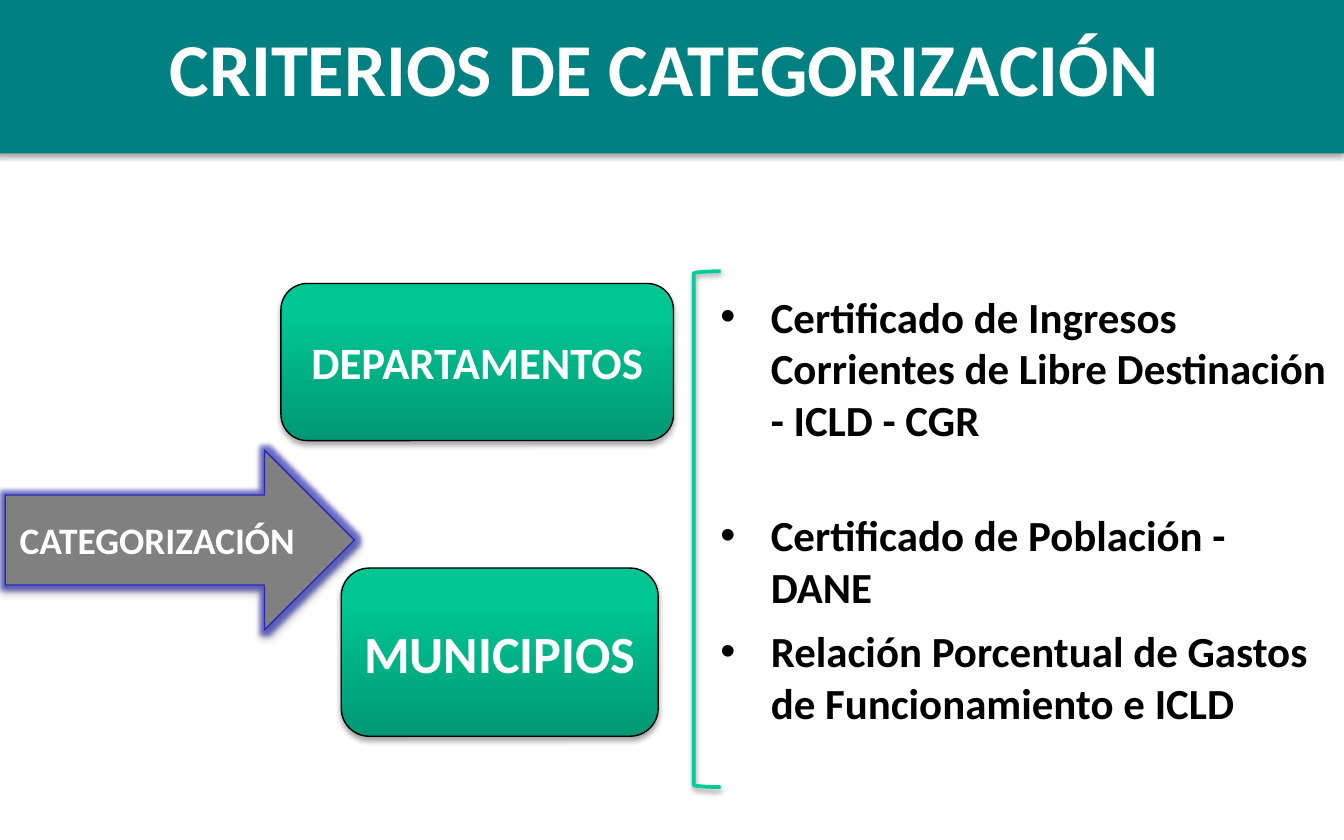
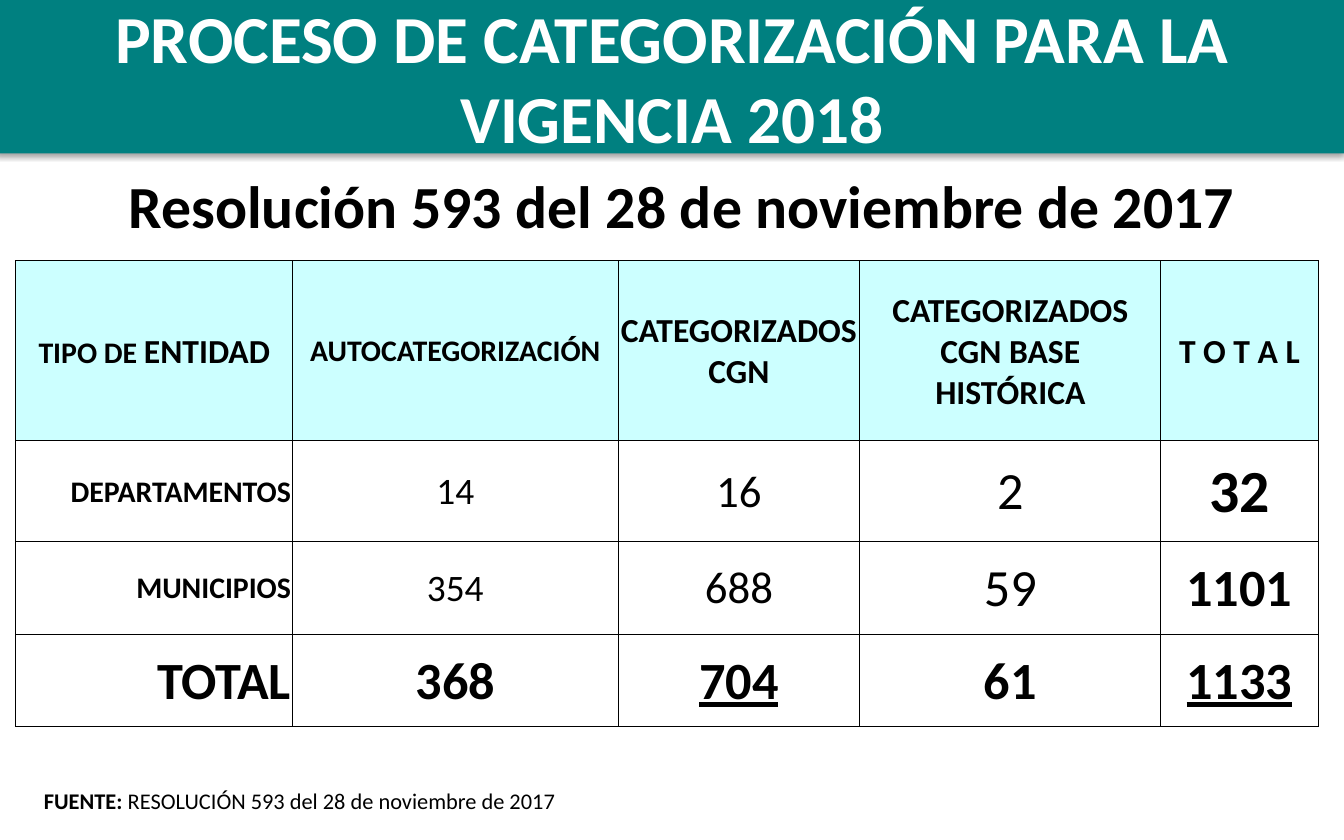
import copy
import dataclasses

import lxml.etree
import pptx
import pptx.dml.color
import pptx.enum.shapes
import pptx.enum.text
import pptx.oxml.ns
import pptx.util

Cm = pptx.util.Cm
Pt = pptx.util.Pt
qn = pptx.oxml.ns.qn
SHAPES = pptx.enum.shapes.MSO_SHAPE
ALIGN = pptx.enum.text.PP_ALIGN
ANCHOR = pptx.enum.text.MSO_ANCHOR


@dataclasses.dataclass(frozen=True)
class Theme:
    """Colours and type sizes shared by the slides."""
    font: str = "Calibri"
    band: str = "008080"
    light: str = "FFFFFF"
    dark: str = "000000"
    arrow: str = "808080"
    arrow_edge: str = "2929B8"
    bracket: str = "00CC99"
    header: str = "CCFFFF"
    gradient: tuple = ((0, "009872"), (0.8, "00C694"), (1, "00C795"))
    title: int = 40
    long_title: int = 36
    subtitle: int = 32
    bullet: int = 23
    source: int = 12
    total: int = 28
    header_small: int = 16
    header_large: int = 18
    columns: tuple = (16, 20, 24, 28, 32)


@dataclasses.dataclass(frozen=True)
class Box:
    """A region in centimetres."""
    left: float
    top: float
    width: float
    height: float

    def inside(self, left, top, width, height):
        """Return a region offset from this one."""
        return Box(self.left + left, self.top + top, width, height)

    def lengths(self):
        """Return the four lengths for python-pptx."""
        return [Cm(value) for value in dataclasses.astuple(self)]


THEME = Theme()
PAGE = Box(0, 0, 25.4, 15.88)


def rgb(colour):
    """Turn a hex string into a colour."""
    return pptx.dml.color.RGBColor.from_string(colour)


def style_run(run, size, colour=THEME.dark, bold=True, underline=False):
    """Format one run."""
    run.font.name = THEME.font
    run.font.size = Pt(size)
    run.font.color.rgb = rgb(colour)
    run.font.bold = bold
    run.font.underline = underline


def write(frame, text, size, align=ALIGN.CENTER, **style):
    """Fill a text frame and format all of its runs."""
    frame.text = text
    for paragraph in frame.paragraphs:
        paragraph.alignment = align
        for run in paragraph.runs:
            style_run(run, size, **style)


def append_run(paragraph, text, size, **style):
    """Continue a paragraph with a differently formatted run."""
    run = paragraph.add_run()
    run.text = text
    style_run(run, size, **style)


def add_effect(parent, kind, colour, opacity, **attributes):
    """Add a coloured effect to an effect list."""
    effect = lxml.etree.SubElement(parent, qn(f"a:{kind}"))
    for key, value in attributes.items():
        effect.set(key, str(value))
    tint = lxml.etree.SubElement(effect, qn("a:srgbClr"), val=colour)
    lxml.etree.SubElement(tint, qn("a:alpha"), val=str(opacity * 1000))


def add_figure(slide, kind, box, fill=None, edge=None, weight=0.75,
               opacity=35, distance=1.8, glow=None):
    """Add a preset shape with a soft shadow below it."""
    figure = slide.shapes.add_shape(kind, *box.lengths())
    figure.shadow.inherit = False
    if fill:
        figure.fill.solid()
        figure.fill.fore_color.rgb = rgb(fill)
    else:
        figure.fill.background()
    if edge:
        figure.line.color.rgb = rgb(edge)
        figure.line.width = Pt(weight)
    else:
        figure.line.fill.background()
    effects = figure.element.spPr.find(qn("a:effectLst"))
    if glow:
        add_effect(effects, "glow", glow, 60, rad=Pt(5))
    add_effect(effects, "outerShdw", THEME.dark, opacity, blurRad=Pt(3.1),
               dist=Pt(distance), dir=5400000, rotWithShape=0)
    return figure


def label(figure, text, size):
    """Centre a white label in a shape."""
    write(figure.text_frame, text, size, colour=THEME.light)
    figure.text_frame.word_wrap = False
    figure.text_frame.vertical_anchor = ANCHOR.MIDDLE


def fill_gradient(figure):
    """Apply the green gradient, darkest at the bottom."""
    figure.fill.gradient()
    figure.fill.gradient_angle = 90
    stops = figure.element.spPr.find(f".//{qn('a:gsLst')}")
    stops.append(copy.deepcopy(stops[0]))
    for stop, (position, colour) in zip(figure.fill.gradient_stops, THEME.gradient):
        stop.position = position
        stop.color.rgb = rgb(colour)


def place(placeholder, box):
    """Move a placeholder and fix its text at the top."""
    placeholder.left, placeholder.top, placeholder.width, placeholder.height = box.lengths()
    placeholder.text_frame.auto_size = pptx.enum.text.MSO_AUTO_SIZE.NONE
    placeholder.text_frame.vertical_anchor = ANCHOR.TOP
    placeholder.text_frame.word_wrap = True


def add_title(slide, box, text, size):
    """Write the slide title over the band."""
    place(slide.shapes.title, box)
    write(slide.shapes.title.text_frame, text, size, colour=THEME.light)


def move_band_to_layout(slide):
    """Draw the title band and hand it to the layout."""
    band = add_figure(slide, SHAPES.RECTANGLE, PAGE.inside(-0.1, -0.05, 25.5, 2.95),
                      fill=THEME.band, opacity=38, distance=1.6)
    band.element.nvSpPr.cNvPr.set("id", "20")
    slide.slide_layout.element.cSld.spTree.insert(2, band.element)


def add_entities(slide, box):
    """Draw the arrow leading to the two types of entity."""
    arrow = add_figure(slide, SHAPES.RIGHT_ARROW, box.inside(0, 3.15, 6.6, 3.4),
                       THEME.arrow, THEME.arrow_edge, glow=THEME.arrow_edge)
    label(arrow, "CATEGORIZACIÓN", 20)
    for name, size, area in (
        ("DEPARTAMENTOS", 24, box.inside(5.21, 0, 7.42, 2.97)),
        ("MUNICIPIOS", 28, box.inside(6.35, 5.38, 5.99, 3.18)),
    ):
        entity = add_figure(slide, SHAPES.ROUNDED_RECTANGLE, area, edge=THEME.dark)
        fill_gradient(entity)
        label(entity, name, size)


def add_requirements(slide, box):
    """List the required certificates beside a bracket."""
    requirements = slide.placeholders[1]
    place(requirements, box.inside(0.25, 0.23, 11.99, 8.6))
    write(requirements.text_frame,
          "Certificado de Ingresos Corrientes de Libre Destinación - ICLD - CGR\n"
          "Certificado de Población - DANE\n"
          "Relación Porcentual de Gastos de Funcionamiento e ICLD",
          THEME.bullet, ALIGN.LEFT)
    for paragraph, gap in zip(requirements.text_frame.paragraphs, (0, 34.5, 7)):
        paragraph.space_before = Pt(gap)
    add_figure(slide, SHAPES.LEFT_BRACKET, box.inside(0, 0, 0.51, 9.75),
               edge=THEME.bracket, weight=2, opacity=38, distance=1.6)


def add_resolution(slide, box):
    """Write the resolution line without a bullet."""
    resolution = slide.placeholders[1]
    place(resolution, box)
    write(resolution.text_frame, "Resolución 593 del 28 de noviembre de 2017", THEME.subtitle)
    paragraph = resolution.text_frame.paragraphs[0]
    paragraph.space_before = Pt(0)
    properties = paragraph._p.get_or_add_pPr()
    properties.set("marL", "0")
    properties.set("indent", "0")
    lxml.etree.SubElement(properties, qn("a:buNone"))


def style_cell(cell, fill=None):
    """Give a cell thin borders, narrow margins and its fill."""
    properties = cell._tc.get_or_add_tcPr()
    for side in "LRTB":
        border = lxml.etree.SubElement(properties, qn(f"a:ln{side}"), w=str(Pt(0.5)))
        paint = lxml.etree.SubElement(border, qn("a:solidFill"))
        lxml.etree.SubElement(paint, qn("a:srgbClr"), val=THEME.dark)
    cell.vertical_anchor = ANCHOR.MIDDLE
    cell.margin_left = cell.margin_right = cell.margin_top = Cm(0.03)
    cell.margin_bottom = 0
    if fill:
        cell.fill.solid()
        cell.fill.fore_color.rgb = rgb(fill)
    else:
        cell.fill.background()


def add_categorization_table(slide, box):
    """Build the table of entities by way of categorization."""
    headers = ("TIPO DE ", "AUTOCATEGORIZACIÓN", "CATEGORIZADOS\nCGN",
               "CATEGORIZADOS\nCGN BASE\nHISTÓRICA", "T O T A L")
    counts = (("DEPARTAMENTOS", "14", "16", "2", "32"),
              ("MUNICIPIOS", "354", "688", "59", "1101"),
              ("TOTAL", "368", "704", "61", "1133"))
    widths = (5.23, 6.15, 4.57, 5.69, 2.97)
    heights = (3.4, 1.91, 1.75, 1.75)
    table = slide.shapes.add_table(len(heights), len(widths), *box.lengths()).table
    table.first_row = table.horz_banding = False
    for column, width in zip(table.columns, widths):
        column.width = Cm(width)
    for row, height in zip(table.rows, heights):
        row.height = Cm(height)

    for index, header in enumerate(headers):
        cell = table.cell(0, index)
        style_cell(cell, THEME.header)
        write(cell.text_frame, header, THEME.header_small if index < 2 else THEME.header_large)
    append_run(table.cell(0, 0).text_frame.paragraphs[0], "ENTIDAD", THEME.header_large)

    for row, values in enumerate(counts, 1):
        is_total = row == len(counts)
        for column, value in enumerate(values):
            cell = table.cell(row, column)
            style_cell(cell)
            size = THEME.total if is_total else THEME.columns[column]
            if row > 1:
                size = min(size, THEME.total)
            write(cell.text_frame, value, size,
                  ALIGN.CENTER if column else ALIGN.RIGHT,
                  bold=is_total or column in (0, 4),
                  underline=is_total and column in (2, 4))


def add_source(slide, box):
    """Write the source line."""
    frame = slide.shapes.add_textbox(*box.lengths()).text_frame
    frame.word_wrap = True
    write(frame, "FUENTE: ", THEME.source, ALIGN.LEFT)
    append_run(frame.paragraphs[0], "RESOLUCIÓN 593 del 28 de noviembre de 2017",
               THEME.source, bold=False)


def build_criteria(slide, page):
    """Build the slide on categorization criteria."""
    add_title(slide, page.inside(0.41, 0.28, 24.28, 3), "CRITERIOS DE CATEGORIZACIÓN",
              THEME.title)
    add_entities(slide, page.inside(0.1, 5.36, 12.63, 8.56))
    add_requirements(slide, page.inside(13.11, 5.13, 12.24, 9.75))


def build_process(slide, page):
    """Build the slide on the categorization process."""
    add_title(slide, page.inside(0, -0.2, 25.4, 3),
              "PROCESO DE CATEGORIZACIÓN PARA LA VIGENCIA 2018", THEME.long_title)
    add_resolution(slide, page.inside(0.48, 3.07, 24.82, 12.57))
    add_source(slide, page.inside(0.58, 14.76, 13.26, 0.76))
    add_categorization_table(slide, page.inside(0.3, 4.93, 24.61, 8.81))


def main():
    """Build and save the presentation."""
    deck = pptx.Presentation()
    deck.slide_width, deck.slide_height = Cm(PAGE.width), Cm(PAGE.height)
    layout = deck.slide_layouts[1]
    criteria = deck.slides.add_slide(layout)
    move_band_to_layout(criteria)
    build_criteria(criteria, PAGE)
    build_process(deck.slides.add_slide(layout), PAGE)
    deck.save("out.pptx")


if __name__ == "__main__":
    main()
